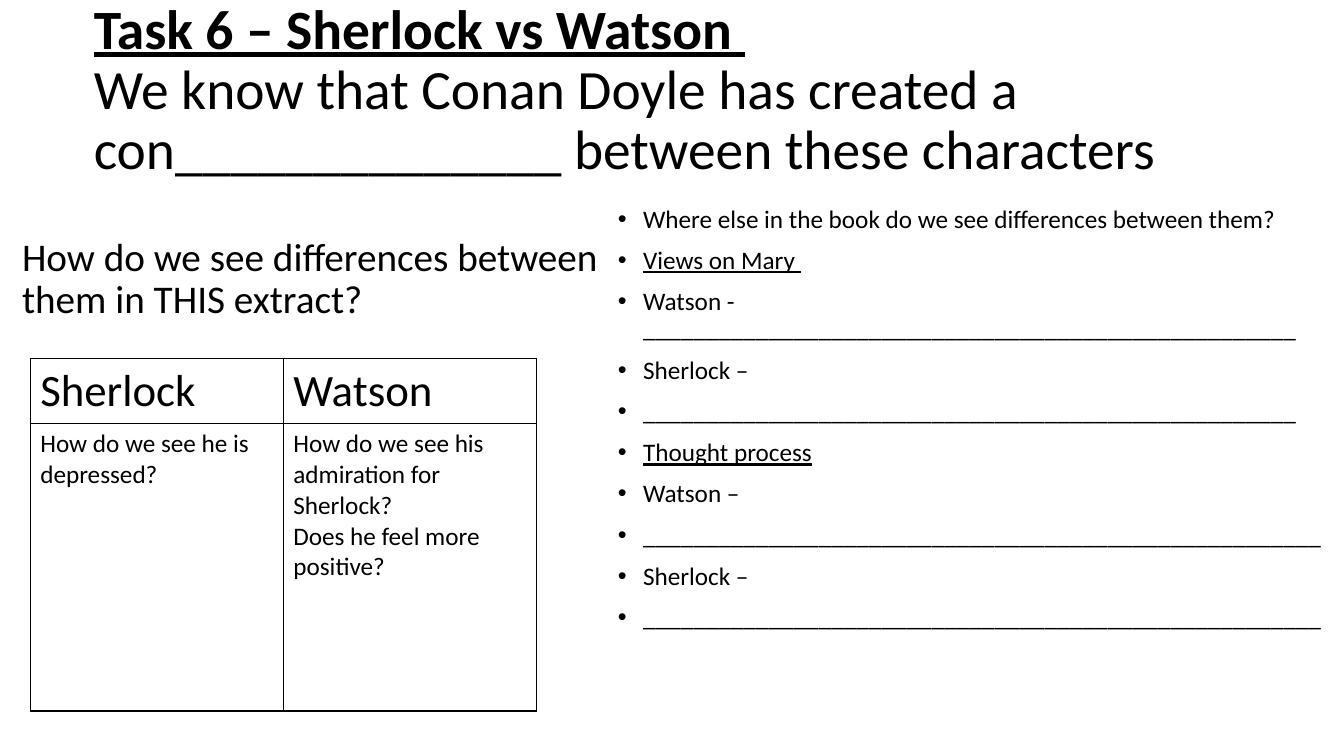
from pptx import Presentation
from pptx.dml.color import RGBColor
from pptx.enum.text import MSO_ANCHOR, MSO_AUTO_SIZE, PP_ALIGN
from pptx.oxml.ns import qn
from pptx.util import Inches, Pt
from lxml.etree import SubElement

BLACK = RGBColor(0x00, 0x00, 0x00)
WHITE = RGBColor(0xFF, 0xFF, 0xFF)


class Worksheet:
    """Holds the text style and the slide, and adds each kind of element."""

    font_name = "Calibri"

    def __init__(self, presentation):
        self.slide = presentation.slides.add_slide(presentation.slide_layouts[5])

    def place(self, element, left, top, width, height):
        box = {"left": left, "top": top, "width": width, "height": height}
        for side, length in box.items():
            setattr(element, side, Inches(length))

    def add_words(self, paragraph, words, size, **extra):
        run = paragraph.add_run()
        run.text = words
        style = {"name": self.font_name, "size": Pt(size), **extra}
        for key, value in style.items():
            setattr(run.font, key, value)
        run.font.color.rgb = BLACK

    def frame(self, element, anchor):
        style = {"word_wrap": True, "auto_size": MSO_AUTO_SIZE.NONE, "vertical_anchor": anchor}
        for key, value in style.items():
            setattr(element.text_frame, key, value)
        return element.text_frame

    def title(self, heading, statement, box):
        placeholder = self.slide.shapes.title
        self.place(placeholder, *box)
        paragraph = self.frame(placeholder, MSO_ANCHOR.MIDDLE).paragraphs[0]
        paragraph.alignment = PP_ALIGN.LEFT
        paragraph.line_spacing = 0.9
        self.add_words(paragraph, heading, 39.6, bold=True, underline=True)
        paragraph.add_line_break()
        self.add_words(paragraph, statement, 39.6, bold=False, underline=False)

    def text(self, lines, size, box, bullets=False, underlined=()):
        area = self.slide.shapes.add_textbox(*map(Inches, box))
        frame = self.frame(area, MSO_ANCHOR.TOP)
        for index, line in enumerate(lines):
            paragraph = frame.paragraphs[0] if index == 0 else frame.add_paragraph()
            paragraph.line_spacing = 0.9
            paragraph.space_before = Pt(10)
            if bullets:
                self.bullet(paragraph)
            self.add_words(paragraph, line, size, underline=line in underlined)

    def bullet(self, paragraph):
        properties = paragraph._p.get_or_add_pPr()
        properties.set("marL", str(Inches(0.25)))
        properties.set("indent", str(-Inches(0.25)))
        SubElement(properties, qn("a:buFont"), typeface="Arial")
        SubElement(properties, qn("a:buChar"), char="•")

    def border(self, cell):
        properties = cell._tc.get_or_add_tcPr()
        for position, side in enumerate(("lnL", "lnR", "lnT", "lnB")):
            line = properties.makeelement(qn(f"a:{side}"), {"w": str(Pt(1))})
            fill = SubElement(line, qn("a:solidFill"))
            SubElement(fill, qn("a:srgbClr"), val=str(BLACK))
            properties.insert(position, line)

    def table(self, rows, sizes, heights, box):
        grid = self.slide.shapes.add_table(len(rows), len(rows[0]), *map(Inches, box)).table
        for row, height, size, entries in zip(grid.rows, heights, sizes, rows):
            row.height = Inches(height)
            for cell, questions in zip(row.cells, entries):
                cell.fill.solid()
                cell.fill.fore_color.rgb = WHITE
                self.border(cell)
                for index, question in enumerate(questions):
                    frame = cell.text_frame
                    paragraph = frame.paragraphs[0] if index == 0 else frame.add_paragraph()
                    self.add_words(paragraph, question, size, bold=False)


def main():
    presentation = Presentation()
    presentation.slide_width = Inches(13.33)
    presentation.slide_height = Inches(7.5)
    sheet = Worksheet(presentation)

    sheet.title(
        "Task 6 – Sherlock vs Watson ",
        "We know that Conan Doyle has created a con" + "_" * 14 + " between these characters",
        (0.83, 0.18, 11.5, 1.45),
    )
    sheet.text(
        ["How do we see differences between them in THIS extract?"], 28, (0.12, 2.31, 5.91, 4.76)
    )

    views, thoughts = "Views on Mary ", "Thought process"
    views_blank, thoughts_blank = "_" * 52, "_" * 54
    prompts = [
        "Where else in the book do we see differences between them?",
        views,
        "Watson - " + views_blank,
        "Sherlock –",
        views_blank,
        thoughts,
        "Watson –",
        thoughts_blank,
        "Sherlock –",
        thoughts_blank,
    ]
    sheet.text(prompts, 18, (6.03, 2, 7.3, 5.07), bullets=True, underlined=(views, thoughts))

    comparison = [
        [["Sherlock"], ["Watson"]],
        [
            ["How do we see he is depressed?"],
            ["How do we see his admiration for Sherlock?", "Does he feel more positive?"],
        ],
    ]
    sheet.table(comparison, (32, 18), (0.64, 2.85), (0.3, 3.56, 5.02, 3.49))

    presentation.save("out.pptx")


if __name__ == "__main__":
    main()
